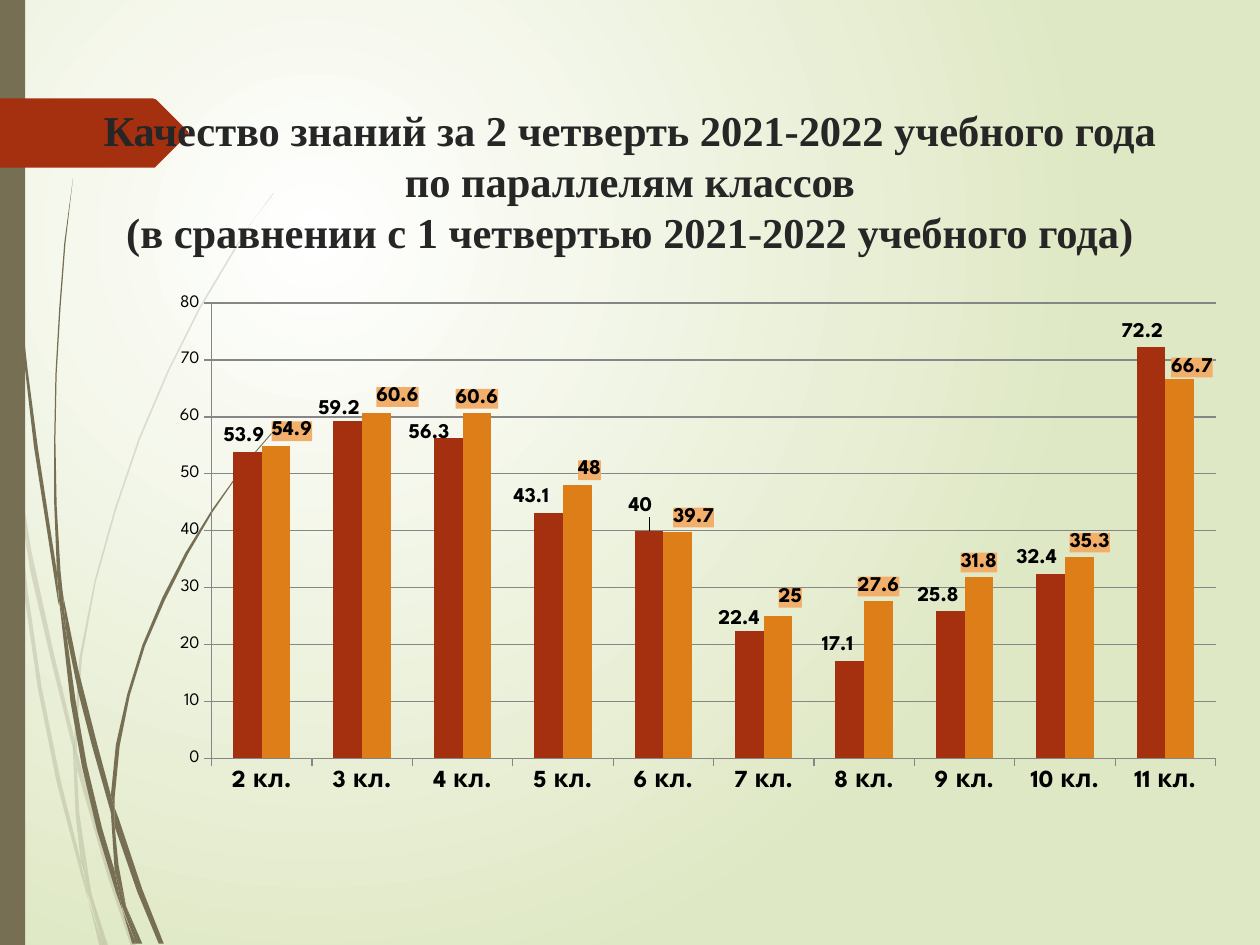
from lxml.etree import SubElement as Sub
from pptx import Presentation
from pptx.chart.data import CategoryChartData as Data
from pptx.dml.color import RGBColor as RGB
from pptx.enum.chart import XL_CHART_TYPE as Kind, XL_LABEL_POSITION as Spot
from pptx.enum.chart import XL_TICK_MARK as Tick
from pptx.enum.shapes import MSO_SHAPE as Form
from pptx.enum.text import MSO_ANCHOR as Anchor, PP_ALIGN as Align
from pptx.oxml import parse_xml
from pptx.oxml.ns import nsdecls, qn
from pptx.util import Pt

HEX = {"white": "FFFFFF", "green": "DFE8C4", "olive": "766F54", "red": "A53010",
       "orange": "DE7E18", "peach": "F1AF6B", "ink": "262626", "black": "000000",
       "grid": "868686"}
SANS, SERIF = "League Spartan", "Times New Roman"
UNIT = Pt(0.72)  # outline points are hundredths of an inch

PALE = [
    [(8, 350), (6, 322), (0, 282), (0, 299), (7, 344)],
    [(40, 522), (59, 599), (59, 586), (43, 520), (25, 438), (10, 345), (12, 376), (24, 453)],
    [(64, 607), (61, 596), (61, 610), (85, 694), (104, 751), (108, 751), (88, 692)],
    [(83, 751), (86, 751), (73, 711)],
    [(64, 683), (48, 619), (33, 545), (22, 469), (12, 376), (8, 350), (12, 411), (19, 470),
     (30, 546), (45, 621), (64, 693), (70, 714), (69, 707)],
    [(58, 599), (60, 646), (64, 683), (67, 692), (73, 711), (72, 706), (63, 646), (61, 610)],
    [(61, 584), (65, 522), (76, 462), (92, 405), (111, 349), (134, 295), (159, 245),
     (187, 198), (201, 175), (217, 154), (217, 153), (201, 175), (186, 197), (158, 244),
     (133, 294), (110, 348), (91, 404), (75, 461), (63, 522), (59, 584), (61, 596)],
    [(70, 714), (79, 751), (82, 751)],
    [(61, 608), (61, 596), (59, 586), (58, 599)],
    [(67, 692), (65, 683), (69, 707), (82, 751), (83, 751), (73, 711)],
]
DARK = [
    [(5, 110), (14, 233), (20, 294), (27, 355), (46, 477), (47, 481), (45, 453), (30, 355),
     (22, 294), (15, 232), (6, 109), (4, 48), (3, 0), (2, 0), (3, 48)],
    [(73, 592), (88, 645), (88, 631), (77, 590), (62, 531), (50, 472), (53, 505), (62, 549)],
    [(94, 649), (91, 641), (91, 656), (109, 708), (126, 749), (130, 749), (113, 706)],
    [(91, 691), (81, 657), (69, 607), (60, 556), (53, 505), (47, 477), (56, 557), (65, 608),
     (77, 659), (92, 708), (97, 722), (96, 717)],
    [(50, 472), (48, 453), (45, 401), (44, 349), (45, 297), (48, 245), (52, 193), (58, 141),
     (51, 193), (47, 245), (44, 297), (43, 349), (43, 399), (45, 449), (49, 472)],
    [(110, 749), (113, 749), (100, 719)],
    [(47, 477), (53, 505), (50, 472), (45, 449), (45, 453)],
    [(91, 633), (95, 592), (103, 552), (115, 513), (131, 476), (149, 440), (169, 406),
     (191, 374), (203, 359), (216, 344), (215, 344), (203, 358), (191, 373), (168, 405),
     (147, 439), (129, 474), (113, 512), (101, 551), (92, 591), (88, 631), (91, 641)],
    [(97, 722), (105, 749), (108, 749)],
    [(88, 645), (91, 691), (96, 706), (100, 719), (94, 686), (91, 656), (90, 651)],
    [(88, 645), (91, 656), (91, 641), (88, 631)],
    [(96, 706), (91, 691), (96, 717), (108, 749), (110, 749), (100, 719)],
]
ARROW = [(149, 107), (124, 132), (123, 133), (0, 133), (0, 78), (121, 78), (124, 79),
         (149, 104), (150, 106)]

CATS = [f"{n} кл." for n in range(2, 12)]
# values, bar colour, label fill, label shifts in points (x, y)
ROWS = [
    ([53.9, 59.2, 56.3, 43.1, 40, 22.4, 17.1, 25.8, 32.4, 72.2], "red", None,
     [-2, -5, -11, -10, -5, -6, -7, -7, -8, -5], [0, 2, 6, 0, -5, 2, 0, 0, 0, 0]),
    ([54.9, 60.6, 60.6, 48, 39.7, 25, 27.6, 31.8, 35.3, 66.7], "orange", "peach",
     [9, 12, 0, 7, 9, 7, 0, 0, 6, 7], [0, -1, 0, 0, 0, -2, 0, 0, 0, 2]),
]
TITLE = ["Качество знаний за 2 четверть 2021-2022 учебного года",
         "по параллелям классов",
         "(в сравнении с 1 четвертью 2021-2022 учебного года)"]


def rgb(name):
    return RGB.from_string(HEX[name])


def style(font, face, size, color, bold=False):
    font.name, font.size, font.bold = face, Pt(size), bold
    font.color.rgb = rgb(color)


def paint(shape, color, alpha=None):
    shape.shadow.inherit = False
    shape.fill.solid()
    shape.fill.fore_color.rgb = rgb(color)
    shape.line.fill.background()
    if alpha:
        tone = shape._element.spPr.find(".//" + qn("a:srgbClr"))
        Sub(tone, qn("a:alpha")).set("val", str(alpha * 1000))


def outline(slide, knots, color, x, y, alpha=None):
    pen = slide.shapes.build_freeform(*knots[0], scale=UNIT)
    pen.add_line_segments(knots[1:], close=True)
    paint(pen.convert_to_shape(Pt(x), Pt(y)), color, alpha)


def backdrop(slide):
    fill = slide.background.fill
    fill.gradient()
    for stop, name, at in zip(fill.gradient_stops, ("white", "green"), (0, 1)):
        stop.color.rgb, stop.position = rgb(name), at
    grad = slide._element.find(".//" + qn("a:gradFill"))
    grad.replace(grad.find(qn("a:lin")), parse_xml(
        f'<a:path {nsdecls("a")} path="circle"><a:fillToRect l="50000" t="50000" '
        'r="100000" b="100000"/></a:path>'))


def side(slide, x, y, w, h):
    """Grass strands, edge bar and arrow tab."""
    for knots in PALE:
        outline(slide, knots, "olive", x, y, 20)
    for knots in DARK:
        outline(slide, knots, "olive", x, y)
    bar = slide.shapes.add_shape(Form.RECTANGLE, Pt(x), Pt(y), Pt(w), Pt(h))
    paint(bar, "olive")
    outline(slide, ARROW, "red", x, y)


def heading(slide, x, y, w, h):
    frame = slide.shapes.add_textbox(Pt(x), Pt(y), Pt(w), Pt(h)).text_frame
    frame.word_wrap = True
    frame.vertical_anchor = Anchor.BOTTOM
    para = frame.paragraphs[0]
    para.alignment, para.line_spacing = Align.CENTER, Pt(29.3)
    for i, line in enumerate(TITLE):
        if i:
            para.add_line_break()
        run = para.add_run()
        run.text = line
        style(run.font, SERIF, 24.3, "ink", True)


def layout(parts):
    tags = "".join(f'<c:{tag} val="{val}"/>' for tag, val in parts.items())
    return parse_xml(f'<c:layout {nsdecls("c")}><c:manualLayout>{tags}'
                     '</c:manualLayout></c:layout>')


def label(series, i, back, dx, dy):
    tip = series.points[i].data_label
    style(tip.font, SANS, 12, "black", True)
    tip.position = Spot.OUTSIDE_END
    node = series._element.findall(".//" + qn("c:dLbl"))[i]
    if dx or dy:
        node.find(qn("c:idx")).addnext(layout({"x": round(dx, 4), "y": round(dy, 4)}))
    if back:
        node.find(qn("c:txPr")).addprevious(parse_xml(
            f'<c:spPr {nsdecls("c", "a")}><a:solidFill><a:srgbClr val="{HEX[back]}"/>'
            '</a:solidFill></c:spPr>'))


def graph(slide, x, y, w, h):
    data = Data()
    data.categories = CATS
    for n, row in enumerate(ROWS, 1):
        data.add_series(f"Series {n}", row[0])
    chart = slide.shapes.add_chart(Kind.COLUMN_CLUSTERED, Pt(x), Pt(y), Pt(w), Pt(h),
                                   data).chart
    chart.has_legend = chart.has_title = False
    style(chart.font, SANS, 10, "black")
    plot = chart.plots[0]
    plot.gap_width, plot.overlap, plot.vary_by_categories = 150, 0, False
    for series, (_, color, back, xs, ys) in zip(plot.series, ROWS):
        series.format.fill.solid()
        series.format.fill.fore_color.rgb = rgb(color)
        for i, (dx, dy) in enumerate(zip(xs, ys)):
            label(series, i, back, dx / w, dy / h)
        style(series.data_labels.font, SANS, 12, "black", True)
        series.data_labels.show_value = True
    cat, val = chart.category_axis, chart.value_axis
    style(cat.tick_labels.font, SANS, 14, "black", True)
    style(val.tick_labels.font, SANS, 10, "black")
    val.minimum_scale, val.maximum_scale, val.major_unit = 0, 80, 10
    val.has_major_gridlines = True
    for axis in (cat, val):
        axis.major_tick_mark = Tick.OUTSIDE
    for part in (cat, val, val.major_gridlines):
        part.format.line.color.rgb = rgb("grid")
        part.format.line.width = Pt(0.75)
    area = chart._chartSpace.find(".//" + qn("c:plotArea"))
    for old in area.findall(qn("c:layout")):
        area.remove(old)
    area.insert(0, layout({"layoutTarget": "inner", "xMode": "edge", "yMode": "edge",
                           "x": 0.096, "y": 0.07, "w": 0.904, "h": 0.827}))


def main():
    deck = Presentation()
    deck.slide_width, deck.slide_height = Pt(720), Pt(540)
    slide = deck.slides.add_slide(deck.slide_layouts[6])
    backdrop(slide)
    side(slide, 0, 0, 14.4, 540)
    heading(slide, 36, 26, 648, 124.5)
    graph(slide, 60, 151.2, 635, 314.6)
    deck.save("out.pptx")


if __name__ == "__main__":
    main()
